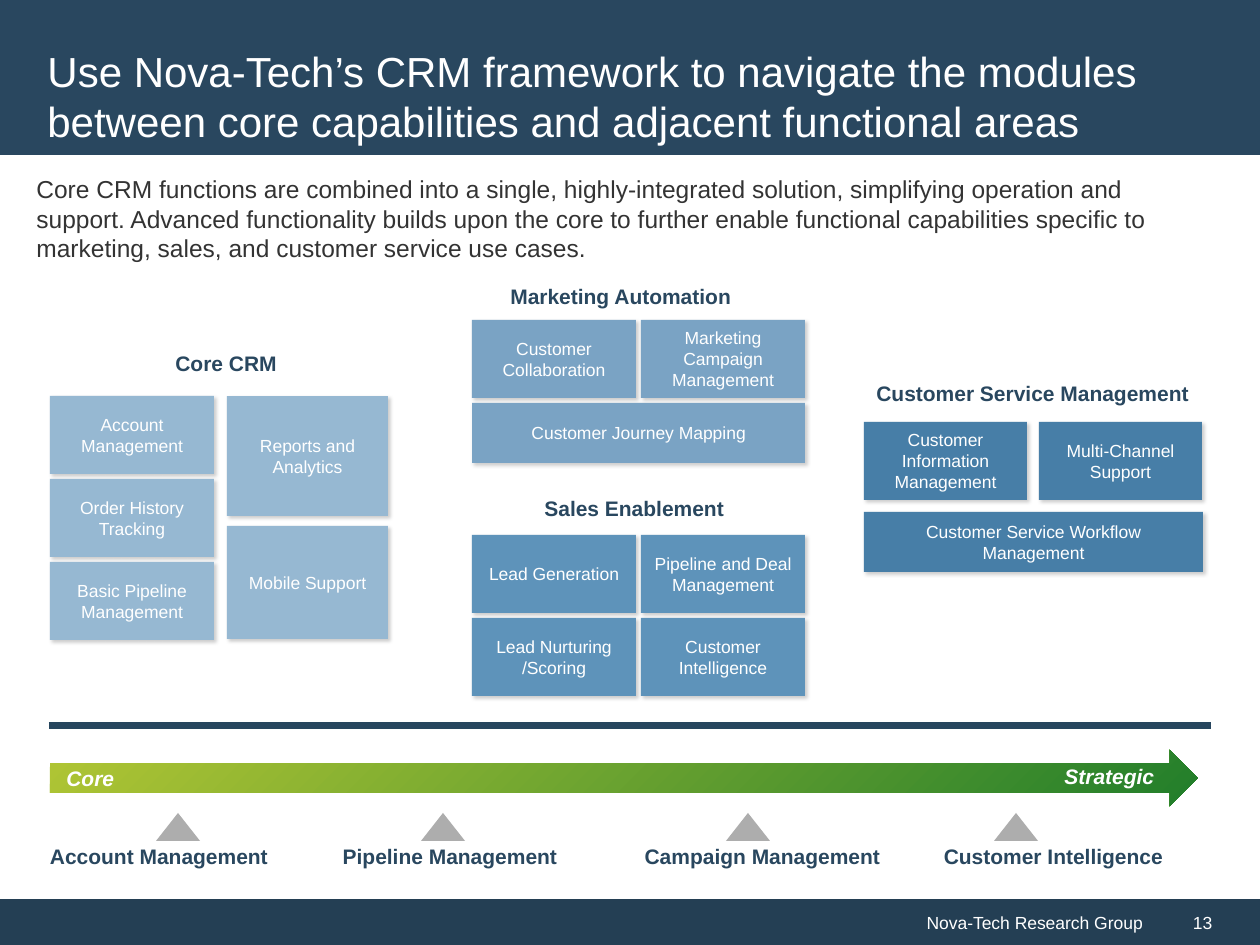
from lxml.etree import SubElement as Sub
from pptx import Presentation
from pptx.dml.color import RGBColor as RGB
from pptx.enum.shapes import MSO_CONNECTOR as Conn, MSO_SHAPE as Kind
from pptx.enum.text import MSO_ANCHOR as Anchor, PP_ALIGN as Align
from pptx.oxml import parse_xml
from pptx.oxml.ns import nsdecls, qn
from pptx.util import Emu, Pt

NAVY = RGB(0x29, 0x47, 0x5F)
RULE = RGB(0x27, 0x46, 0x5E)
DARK = RGB(0x24, 0x3F, 0x54)
WHITE = RGB(0xFF, 0xFF, 0xFF)
INK = RGB(0x33, 0x33, 0x33)
GREY = RGB(0xAD, 0xAD, 0xAD)
CORE = RGB(0x96, 0xB8, 0xD2)
MARKET = RGB(0x7A, 0xA3, 0xC4)
SALES = RGB(0x5E, 0x93, 0xBA)
SERVICE = RGB(0x47, 0x7E, 0xA7)
GREEN = RGB(0x22, 0x7E, 0x2B)
LIME = RGB(0xB0, 0xC5, 0x34)

SHADE = f'''<a:effectLst {nsdecls("a")}>
<a:outerShdw blurRad="25400" dist="25400" dir="2700000" algn="tl" rotWithShape="0">
<a:srgbClr val="000000"><a:alpha val="20000"/></a:srgbClr></a:outerShdw></a:effectLst>'''
BLEND = f'''<a:gradFill {nsdecls("a")} rotWithShape="1"><a:gsLst>
<a:gs pos="0"><a:srgbClr val="{GREEN}"/></a:gs>
<a:gs pos="100000"><a:srgbClr val="{LIME}"/></a:gs></a:gsLst>
<a:path path="circle"><a:fillToRect l="100000" t="100000"/></a:path></a:gradFill>'''


def px(n):
    return Emu(round(n * 914400 / 126))


def write(frame, text, size, color, align=Align.LEFT, bold=False, italic=False):
    frame.word_wrap = True
    para = frame.paragraphs[0]
    para.text = text
    para.alignment = align
    font = para.font
    font.name, font.size = "Arial", Pt(size)
    font.bold, font.italic = bold, italic
    font.color.rgb = color


def label(slide, box, text, size, color, **style):
    area = slide.shapes.add_textbox(*map(px, box))
    write(area.text_frame, text, size, color, **style)
    return area


def shape(slide, kind, box, color):
    item = slide.shapes.add_shape(kind, *map(px, box))
    item.shadow.inherit = False
    item.fill.solid()
    item.fill.fore_color.rgb = color
    item.line.fill.background()
    return item


def tile(slide, box, text, color):
    item = shape(slide, Kind.RECTANGLE, box, color)
    props = item._element.spPr
    props.remove(props.find(qn("a:effectLst")))
    props.append(parse_xml(SHADE))
    item.text_frame.vertical_anchor = Anchor.MIDDLE
    write(item.text_frame, text, 10, WHITE, Align.CENTER)


def stack(slide, left, top, wide, gap, color, rows):
    for high, names in rows:
        each = (wide - gap * (len(names) - 1)) // len(names)
        for i, name in enumerate(names):
            tile(slide, (left + i * (each + gap), top, each, high), name, color)
        top += high + gap


def head(slide, left, top, wide, text):
    label(slide, (left, top, wide, 38), text, 12, NAVY, bold=True)


def core(slide, left, top):
    head(slide, left + 113, top, 129, "Core CRM")
    stack(slide, left, top + 52, 164, 5, CORE, [
        (78, ["Account Management"]),
        (78, ["Order History Tracking"]),
        (78, ["Basic Pipeline Management"])])
    stack(slide, left + 177, top + 52, 161, 10, CORE, [
        (120, ["Reports and Analytics"]), (113, ["Mobile Support"])])


def market(slide, left, top):
    head(slide, left + 26, top, 266, "Marketing Automation")
    stack(slide, left, top + 43, 333, 5, MARKET, [
        (78, ["Customer Collaboration", "Marketing Campaign Management"]),
        (60, ["Customer Journey Mapping"])])


def sales(slide, left, top):
    head(slide, left + 60, top, 232, "Sales Enablement")
    stack(slide, left, top + 46, 333, 5, SALES, [
        (78, ["Lead Generation", "Pipeline and Deal Management"]),
        (78, ["Lead Nurturing /Scoring", "Customer Intelligence"])])


def service(slide, left, top):
    head(slide, left, top, 339, "Customer Service Management")
    stack(slide, left, top + 48, 339, 12, SERVICE, [
        (78, ["Customer Information Management", "Multi-Channel Support"]),
        (60, ["Customer Service Workflow Management"])])


def banner(slide, wide, high):
    shape(slide, Kind.RECTANGLE, (0, 0, wide, high), NAVY)
    title = label(slide, (35, 35, wide - 72, 121),
                  "Use Nova-Tech’s CRM framework to navigate the modules "
                  "between core capabilities and adjacent functional areas",
                  24, WHITE)
    title.text_frame.vertical_anchor = Anchor.MIDDLE


def footer(slide, top, wide, high):
    split = wide - 105
    for box, text, align, inset in (
            ((0, top, split, high), "Nova-Tech Research Group", Align.RIGHT, 13),
            ((split, top, 105, high), "13", Align.LEFT, 38)):
        bar = shape(slide, Kind.RECTANGLE, box, DARK)
        frame = bar.text_frame
        frame.margin_left = px(inset)
        frame.vertical_anchor = Anchor.MIDDLE
        write(frame, text, 10, WHITE, align)


def rule(slide, left, top, wide):
    line = slide.shapes.add_connector(
        Conn.STRAIGHT, px(left), px(top), px(left + wide), px(top))
    line.line.color.rgb = RULE
    line.line.width = Pt(4)
    Sub(line._element.spPr, qn("a:effectLst"))


def scale(slide, left, top, wide, high):
    arrow = shape(slide, Kind.RIGHT_ARROW, (left, top, wide, high), LIME)
    arrow.adjustments[0] = 0.53
    arrow.adjustments[1] = 0.5
    props = arrow._element.spPr
    props.replace(props.find(qn("a:solidFill")), parse_xml(BLEND))
    for dx, dy, span, text in ((4, 9, 76, "Core"), (1002, 7, 118, "Strategic")):
        label(slide, (left + dx, top + dy, span, 38), text, 12, WHITE,
              bold=True, italic=True)


def stages(slide, left, top, high):
    names = ("Account Management", "Pipeline Management",
             "Campaign Management", "Customer Intelligence")
    spans = (248, 334, 291, 291)
    frame = slide.shapes.add_table(
        1, 4, px(left), px(top), px(sum(spans)), px(high))
    table = frame.table
    table.first_row = table.horz_banding = False
    table.rows[0].height = px(high)
    for i, (name, span) in enumerate(zip(names, spans)):
        table.columns[i].width = px(span)
        cell = table.cell(0, i)
        cell.fill.background()
        cell.vertical_anchor = Anchor.MIDDLE
        write(cell.text_frame, name, 12, NAVY, Align.CENTER, True)
    for dx in (121, 386, 691, 959):
        shape(slide, Kind.ISOSCELES_TRIANGLE,
              (left + dx, top - 19, 44, 28), GREY)


def main():
    deck = Presentation()
    deck.slide_width, deck.slide_height = px(1260), px(945)
    slide = deck.slides.add_slide(deck.slide_layouts[6])
    banner(slide, 1260, 155)
    label(slide, (24, 168, 1198, 102),
          "Core CRM functions are combined into a single, highly-integrated "
          "solution, simplifying operation and support. Advanced functionality "
          "builds upon the core to further enable functional capabilities "
          "specific to marketing, sales, and customer service use cases.",
          14, INK)
    core(slide, 50, 344)
    market(slide, 472, 277)
    sales(slide, 472, 489)
    service(slide, 864, 374)
    rule(slide, 49, 726, 1162)
    scale(slide, 50, 750, 1148, 56)
    stages(slide, 35, 832, 50)
    footer(slide, 899, 1260, 46)
    deck.save("out.pptx")


if __name__ == "__main__":
    main()
